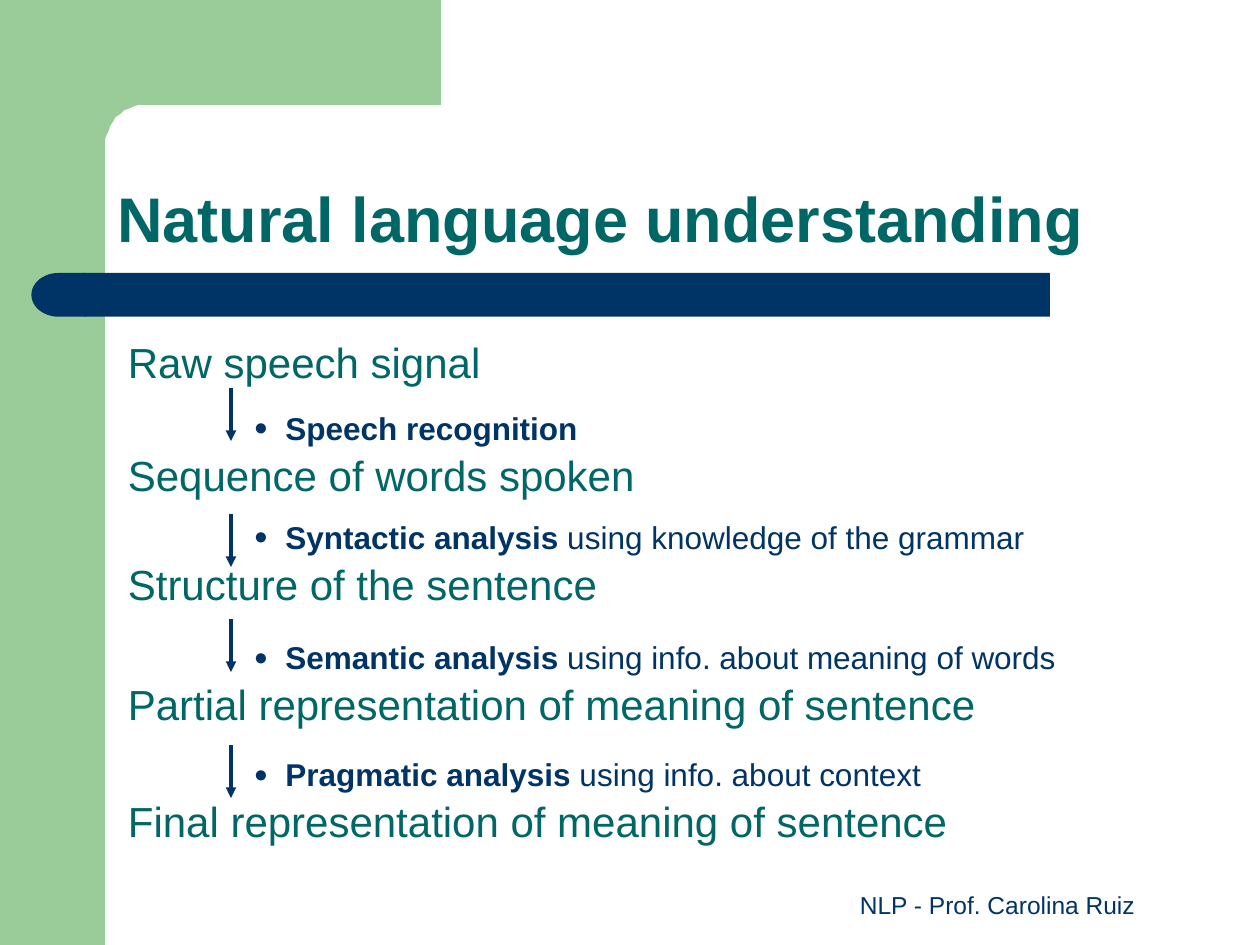
from math import cos, pi, sin

from lxml.etree import SubElement
from pptx import Presentation
from pptx.dml.color import RGBColor
from pptx.enum.shapes import MSO_CONNECTOR as Link, MSO_SHAPE as Shape
from pptx.enum.text import MSO_ANCHOR as Anchor, PP_ALIGN as Align
from pptx.oxml.ns import qn
from pptx.util import Pt

GREEN, NAVY, TEAL = "99CC99", "003366", "006666"


def paint(color_format, color):
    color_format.rgb = RGBColor.from_string(color)


def add_run(paragraph, text, size, color, bold=False):
    run = paragraph.add_run()
    run.text = text
    run.font.name = "Arial"
    run.font.size = Pt(size)
    run.font.bold = bold
    paint(run.font.color, color)


prs = Presentation()
prs.slide_width, prs.slide_height = Pt(720), Pt(540)
slide = prs.slides.add_slide(prs.slide_layouts[6])
shapes = slide.shapes

# Green side band and top band with a rounded inner corner
side_band = shapes.add_shape(Shape.RECTANGLE, 0, 0, Pt(60), Pt(540))
arc = [(82 - 22 * sin(i * pi / 24), 83.5 - 23.5 * cos(i * pi / 24))
       for i in range(13)]
outline = shapes.build_freeform(252, 0, scale=Pt(1))
outline.add_line_segments([(252, 60), *arc, (60, 92), (36, 92), (36, 0)])
top_band = outline.convert_to_shape()

# Navy bar with a round left end
bar = shapes.add_shape(Shape.RECTANGLE, Pt(48), Pt(156), Pt(552), Pt(25))
bar_end = shapes.add_shape(Shape.FLOWCHART_DELAY, Pt(18), Pt(156), Pt(31), Pt(25))
bar_end.element.spPr.find(qn("a:xfrm")).set("flipH", "1")

for part, color in ((side_band, GREEN), (top_band, GREEN),
                    (bar, NAVY), (bar_end, NAVY)):
    part.shadow.inherit = False
    part.fill.solid()
    paint(part.fill.fore_color, color)
    part.line.fill.background()

# Footer
footer = shapes.add_textbox(Pt(456), Pt(492), Pt(228), Pt(37)).text_frame
footer.word_wrap = True
footer.vertical_anchor = Anchor.BOTTOM
footer.paragraphs[0].alignment = Align.CENTER
add_run(footer.paragraphs[0], "NLP - Prof. Carolina Ruiz", 14, NAVY)

# Title
title = shapes.add_textbox(Pt(60), Pt(60), Pt(624), Pt(90)).text_frame
title.word_wrap = True
title.vertical_anchor = Anchor.BOTTOM
title.paragraphs[0].line_spacing = 0.9
add_run(title.paragraphs[0], "Natural language understanding", 36, TEAL, True)

# Stages of understanding, each followed by the step that leads to the next:
# stage, step, rest of the step, line spacing of the step
stages = [
    ("Raw speech signal", "Speech recognition", "", 1.4),
    ("Sequence of words spoken", "Syntactic analysis",
     " using knowledge of the grammar", 1.3),
    ("Structure of the sentence", "Semantic analysis",
     " using info. about meaning of words", 1.6),
    ("Partial representation of meaning of sentence", "Pragmatic analysis",
     " using info. about context", 1.5),
    ("Final representation of meaning of sentence", "", "", None),
]
body = shapes.add_textbox(Pt(66), Pt(192), Pt(600), Pt(288)).text_frame
body.word_wrap = True
for stage, step, detail, step_spacing in stages:
    line = body.add_paragraph() if body.text else body.paragraphs[0]
    line.line_spacing = 0.9
    add_run(line, stage, 24, TEAL)
    lines = [(line, 27, -27)]
    if step:
        step_line = body.add_paragraph()
        step_line.level = 2
        step_line.line_spacing = step_spacing
        add_run(step_line, step, 18, NAVY, True)
        if detail:
            add_run(step_line, detail, 18, NAVY)
        lines.append((step_line, 90, -18))
    # Indents, and space before as a share of the text size
    for paragraph, margin, indent in lines:
        props = paragraph._p.get_or_add_pPr()
        props.set("marL", str(Pt(margin)))
        props.set("indent", str(Pt(indent)))
        before = SubElement(props, qn("a:spcBef"))
        SubElement(before, qn("a:spcPct")).set("val", "20000")
    # Bullet of the step
    if step:
        bullet_color = SubElement(props, qn("a:buClr"))
        SubElement(bullet_color, qn("a:srgbClr")).set("val", NAVY)
        SubElement(props, qn("a:buSzPct")).set("val", "75000")
        SubElement(props, qn("a:buFont")).set("typeface", "Arial")
        SubElement(props, qn("a:buChar")).set("char", "●")

# Arrows between the stages
for top in (222, 294, 354, 426):
    arrow = shapes.add_connector(Link.STRAIGHT, Pt(132), Pt(top), Pt(132), Pt(top + 30))
    paint(arrow.line.color, NAVY)
    arrow.line.width = Pt(2)
    SubElement(arrow.line._get_or_add_ln(), qn("a:tailEnd")).set("type", "triangle")
    SubElement(arrow.element.spPr, qn("a:effectLst"))

prs.save("out.pptx")
